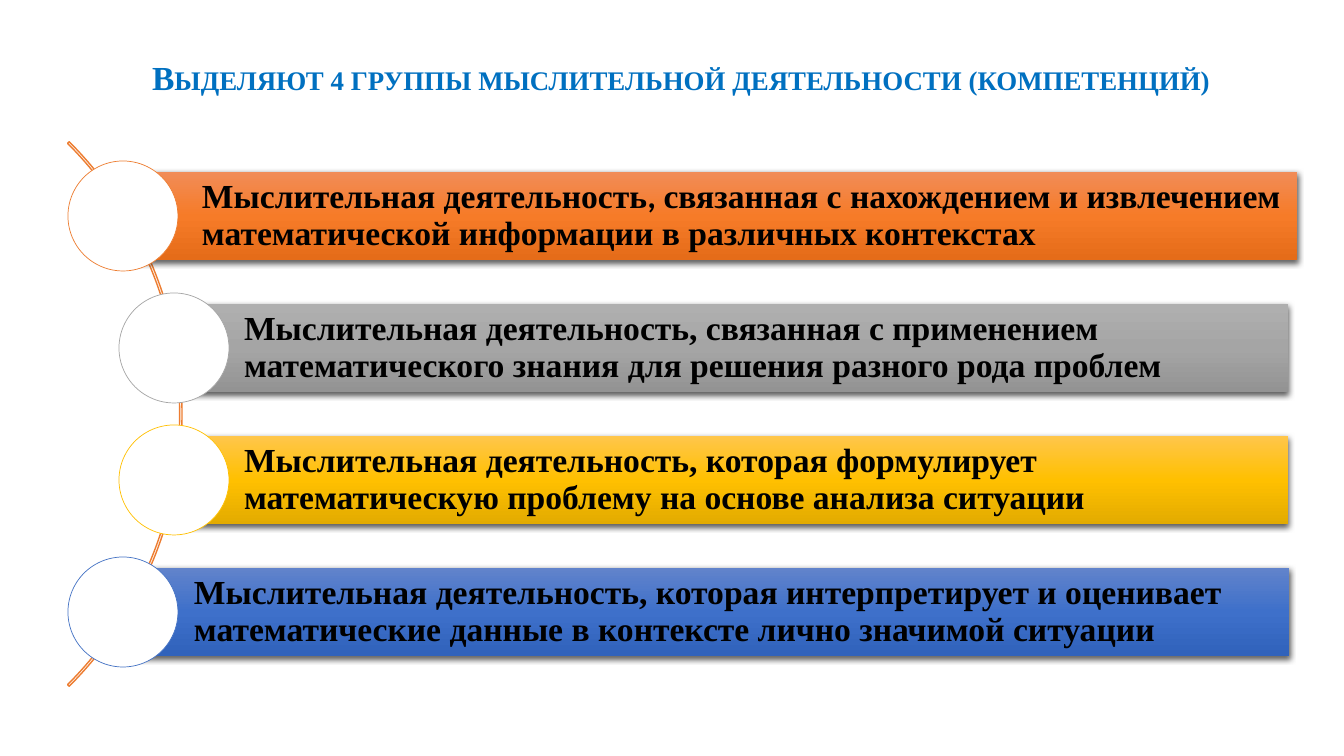
import copy
import dataclasses

import lxml.etree
import pptx
import pptx.dml.color
import pptx.enum.shapes
import pptx.enum.text
import pptx.oxml
import pptx.oxml.ns
import pptx.util

PX = 914400 / 100.8
SHAPE = pptx.enum.shapes.MSO_SHAPE
MIDDLE = pptx.enum.text.MSO_ANCHOR.MIDDLE
LEFT = pptx.enum.text.PP_ALIGN.LEFT
qn = pptx.oxml.ns.qn


@dataclasses.dataclass(frozen=True)
class Theme:
    font: str = "Times New Roman"
    comma_font: str = "Calibri"
    size: int = 24
    title: str = "0070C0"
    text: str = "000000"
    circle: str = "FFFFFF"
    arc: str = "ED7D31"
    # circle outline, then the three gradient stops of the bar
    groups: tuple = (
        ("ED7D31", ("F18C57", "F67B28", "E56C19")),
        ("A5A5A5", ("AFAFAF", "A5A5A5", "939393")),
        ("FFC000", ("FFC64B", "FFC000", "E3AB00")),
        ("4472C4", ("6183CB", "3E70CA", "3062BB")),
    )


THEME = Theme()
TITLE = "Выделяют 4 группы мыслительной деятельности (компетенций)"
# bar left, bar width, circle left (px from the diagram's left), text runs
GROUPS = (
    (64, 1165, 0, ("Мыслительная деятельность", ", ",
                   "связанная с нахождением и извлечением математической "
                   "информации в различных контекстах")),
    (106, 1114, 51, ("Мыслительная деятельность, связанная с применением "
                     "математического знания для решения разного рода проблем",)),
    (106, 1114, 51, ("Мыслительная деятельность, которая формулирует "
                     "математическую проблему на основе анализа ситуации",)),
    (56, 1165, 0, ("Мыслительная деятельность, которая интерпретирует и оценивает "
                   "математические данные в контексте лично значимой ситуации",)),
)


def px(n):
    return pptx.util.Emu(round(n * PX))


def rgb(value):
    return pptx.dml.color.RGBColor.from_string(value)


def add_shape(slide, kind, x, y, w, h):
    s = slide.shapes.add_shape(kind, px(x), px(y), px(w), px(h))
    s.shadow.inherit = False
    return s


def set_outline(s, color, points):
    s.line.color.rgb = rgb(color)
    s.line.width = pptx.util.Pt(points)


def set_gradient(s, colors):
    """Fill from top to bottom with three evenly spaced stops."""
    s.fill.gradient()
    s.fill.gradient_angle = 270
    stops = s._element.spPr.find(".//" + qn("a:gsLst"))
    stops.insert(1, copy.deepcopy(stops[0]))
    for i, (stop, color) in enumerate(zip(s.fill.gradient_stops, colors)):
        stop.position = i / 2
        stop.color.rgb = rgb(color)


def add_drop_shadow(s):
    effects = s._element.spPr.find(qn("a:effectLst"))
    shadow = lxml.etree.SubElement(
        effects, qn("a:outerShdw"), blurRad=str(pptx.util.Pt(4.5)),
        dist=str(pptx.util.Pt(1.5)), dir="5400000", algn="ctr", rotWithShape="0")
    color = lxml.etree.SubElement(shadow, qn("a:srgbClr"), val="000000")
    lxml.etree.SubElement(color, qn("a:alpha"), val="63000")


def write_text(tf, runs, color):
    tf.word_wrap = True
    tf.auto_size = pptx.enum.text.MSO_AUTO_SIZE.NONE
    tf.vertical_anchor = MIDDLE
    p = tf.paragraphs[0]
    p.alignment = LEFT
    p.line_spacing = 0.9
    p.font.size = pptx.util.Pt(THEME.size)
    p.font.bold = True
    p.font.color.rgb = rgb(color)
    if ", " not in runs:
        p.font.name = THEME.font
    for text in runs:
        r = p.add_run()
        r.text = text
        if ", " in runs:
            r.font.name = THEME.comma_font if text == ", " else THEME.font
    return p


def add_title(slide, x, y, w, h):
    s = slide.shapes.title
    s.left, s.top, s.width, s.height = px(x), px(y), px(w), px(h)
    p = write_text(s.text_frame, (TITLE,), THEME.title)
    p.runs[0].font._element.set("cap", "small")


def add_arc(slide, x, y, size):
    s = add_shape(slide, SHAPE.BLOCK_ARC, x, y, size, size)
    for i, value in enumerate((189, 27, 0.003)):
        s.adjustments[i] = value
    s.fill.background()
    set_outline(s, THEME.arc, 1)


def add_bar(slide, x, y, w, h, colors, runs):
    s = add_shape(slide, SHAPE.RECTANGLE, x, y, w, h)
    set_gradient(s, colors)
    s.line.fill.background()
    add_drop_shadow(s)
    tf = s.text_frame
    tf.margin_left = px(70)
    tf.margin_top = tf.margin_right = tf.margin_bottom = px(7)
    write_text(tf, runs, THEME.text)


def add_circle(slide, x, y, size, color):
    s = add_shape(slide, SHAPE.OVAL, x, y, size, size)
    s.fill.solid()
    s.fill.fore_color.rgb = rgb(THEME.circle)
    set_outline(s, color, 0.5)


def add_diagram(slide, x, y, h):
    """Arc with circles and bars centred on equal rows of the given height."""
    circle, bar, arc = 110, 88, 770
    pitch = (h - circle) / (len(GROUPS) - 1)
    add_arc(slide, x - 656, y + (h - arc) / 2, arc)
    for i, (group, colors) in enumerate(zip(GROUPS, THEME.groups)):
        bar_x, bar_w, circle_x, runs = group
        outline, stops = colors
        top = y + i * pitch
        add_bar(slide, x + bar_x, top + (circle - bar) / 2, bar_w, bar, stops, runs)
        add_circle(slide, x + circle_x, top, circle, outline)


def main():
    prs = pptx.Presentation()
    prs.slide_width, prs.slide_height = px(1344), px(756)
    slide = prs.slides.add_slide(prs.slide_layouts[5])
    add_title(slide, 142, 31, 1249, 97)
    add_diagram(slide, 68, 161, 506)
    prs.save("out.pptx")


if __name__ == "__main__":
    main()
